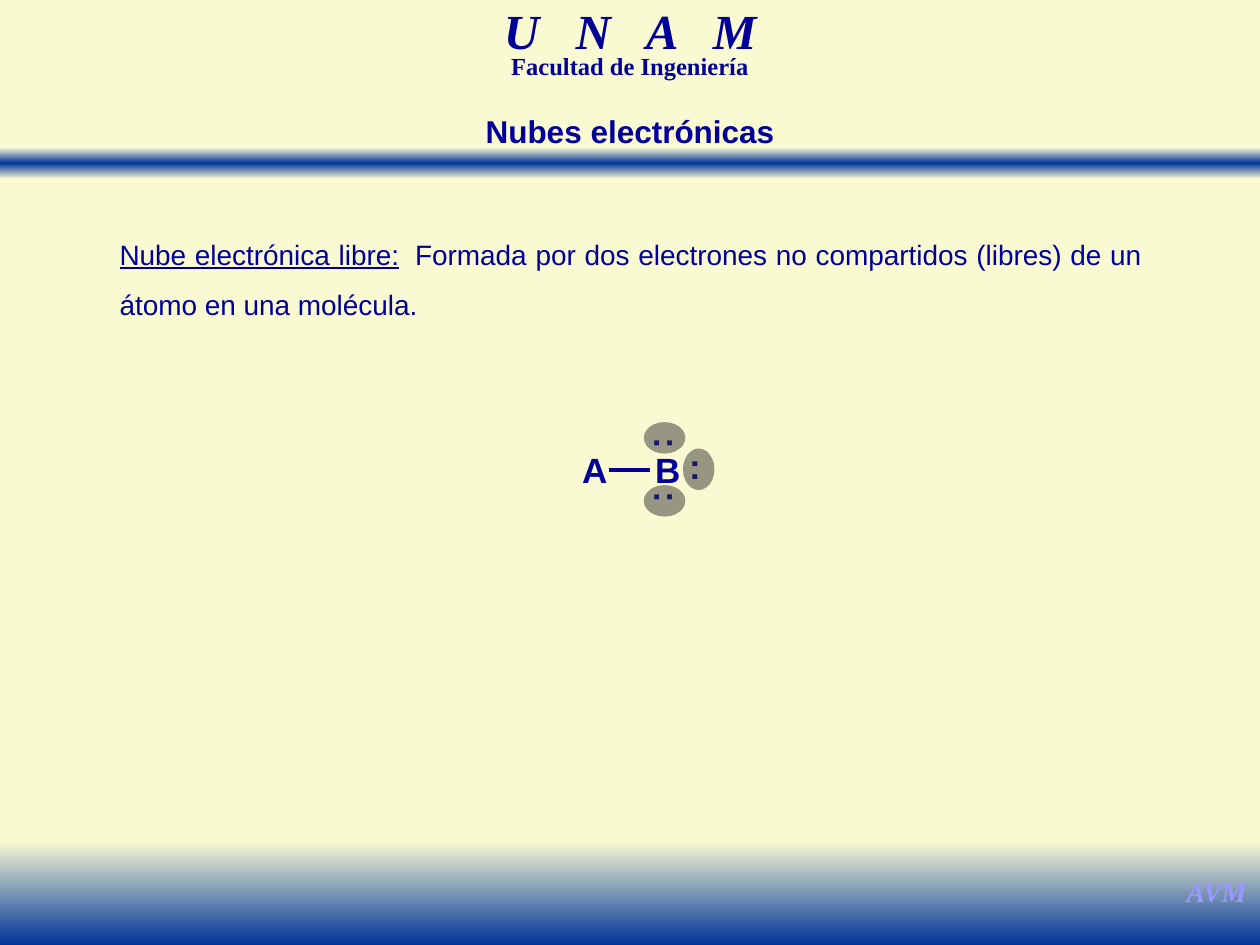
"""Build the slide on free electron clouds, on a grid of 100 columns by 75 rows."""
from copy import deepcopy
from pptx import Presentation, dml, util as u
from pptx.dml import color
from pptx.enum import shapes, text
from pptx.oxml import ns, xmlchemy as xml

NAVY, CREAM, BLUE = "000099", "FAFAD2", "003399"
SERIF, SANS = "Times New Roman", "Arial"
MID, JUST = text.PP_ALIGN.CENTER, text.PP_ALIGN.JUSTIFY


def hue(code):
    return color.RGBColor.from_string(code)


def write(box, words, size, face=SANS, tint=NAVY, bold=True, slant=False,
          align=MID, lead=None, inset=True, wrap=False):
    frame = box.text_frame
    frame.word_wrap = wrap
    frame.vertical_anchor = text.MSO_ANCHOR.TOP
    if not inset:
        frame.margin_left = frame.margin_right = 0
        frame.margin_top = frame.margin_bottom = 0
    para = frame.paragraphs[0]
    para.alignment = align
    para.line_spacing = lead
    para.font.size, para.font.name = u.Pt(size), face
    para.font.bold, para.font.italic = bold, slant
    para.font.color.rgb = hue(tint)
    for part, gap, under in words:
        run = para.add_run()
        run.text = part
        if under:
            run.font.underline = True
        if gap:
            run.font._element.set("spc", str(gap * 100))


deck = Presentation()
deck.slide_width, deck.slide_height = u.Inches(10), u.Inches(7.5)
cell = deck.slide_width // 100
slide = deck.slides.add_slide(deck.slide_layouts[5])
slide.background.fill.solid()
slide.background.fill.fore_color.rgb = hue(CREAM)
tree = slide.shapes

title = tree.title
title.left, title.top, title.width, title.height = (
    int(cell * v) for v in (37.4, 8.4, 25.2, 4))
write(title, [("Nubes electrónicas", 0, False)], 18)

for top, high, tints in ((11.7, 2.5, (CREAM, BLUE, CREAM)), (66.7, 8.3, (CREAM, BLUE))):
    band = tree.add_shape(shapes.MSO_SHAPE.RECTANGLE, 0, int(cell * top),
                          deck.slide_width, int(cell * high))
    band.shadow.inherit = False
    band.line.fill.background()
    band.fill.gradient()
    band.fill.gradient_angle = 270
    stops = band._element.spPr.find(".//" + ns.qn("a:gsLst"))
    while len(stops) < len(tints):
        stops.append(deepcopy(stops[-1]))
    for i, (stop, tint) in enumerate(zip(band.fill.gradient_stops, tints)):
        stop.position = i / (len(tints) - 1)
        stop.color.rgb = hue(tint)

atom = dict(size=20, align=JUST, inset=False)
pair = dict(size=20, align=JUST)
for at, turn, words, style in (
    ((93.1, 68.9, 6.9, 3.7), 0, [("AVM", 0, False)],
     dict(size=16, face=SERIF, tint="9999FF", slant=True)),
    ((30.4, 0.8, 39.2, 4.3), 0, [("U N A ", 7, False), ("M", 0, False)],
     dict(size=28, face=SERIF, slant=True, lead=0.7, wrap=True)),
    ((32.1, 4.2, 35.8, 2.6), 0, [("Facultad de Ingeniería", 0, False)],
     dict(size=14, face=SERIF, lead=0.7, wrap=True)),
    ((8.5, 17, 83.1, 8.6), 0,
     [("Nube electrónica libre:", 0, True), (" ", 4, False),
      ("Formada por dos electrones no compartidos (libres) de un átomo en una molécula.",
       0, False)],
     dict(size=16, bold=False, align=JUST, lead=1.5, wrap=True)),
    ((46.2, 35.6, 2, 3.3), 0, [("A", 0, False)], atom),
    ((52, 35.6, 2, 3.3), 0, [("B", 0, False)], atom),
    ((53.7, 34.8, 2.9, 4.3), 0, [(":", 0, False)], pair),
    ((51.6, 37.3, 2.9, 4.3), 90, [(":", 0, False)], pair),
    ((51.6, 33, 2.9, 4.3), 90, [(":", 0, False)], pair),
):
    box = tree.add_textbox(*(int(cell * v) for v in at))
    box.rotation = turn
    write(box, words, **style)

bond = tree.add_connector(shapes.MSO_CONNECTOR.STRAIGHT,
                          *(int(cell * v) for v in (48.3, 37.3, 51.6, 37.3)))
bond.line.color.rgb = hue(NAVY)
bond.line.width = u.Pt(2.5)
bond._element.spPr.append(xml.OxmlElement("a:effectLst"))

for at in ((51.1, 33.5, 3.3, 2.5), (54.2, 35.6, 2.5, 3.3), (51.1, 38.5, 3.3, 2.5)):
    cloud = tree.add_shape(shapes.MSO_SHAPE.OVAL, *(int(cell * v) for v in at))
    cloud.shadow.inherit = False
    cloud.line.fill.background()
    cloud.fill.solid()
    cloud.fill.fore_color.rgb = hue("333333")
    alpha = xml.OxmlElement("a:alpha")
    alpha.set("val", "50000")
    cloud._element.spPr.find(".//" + ns.qn("a:srgbClr")).append(alpha)

deck.save("out.pptx")
